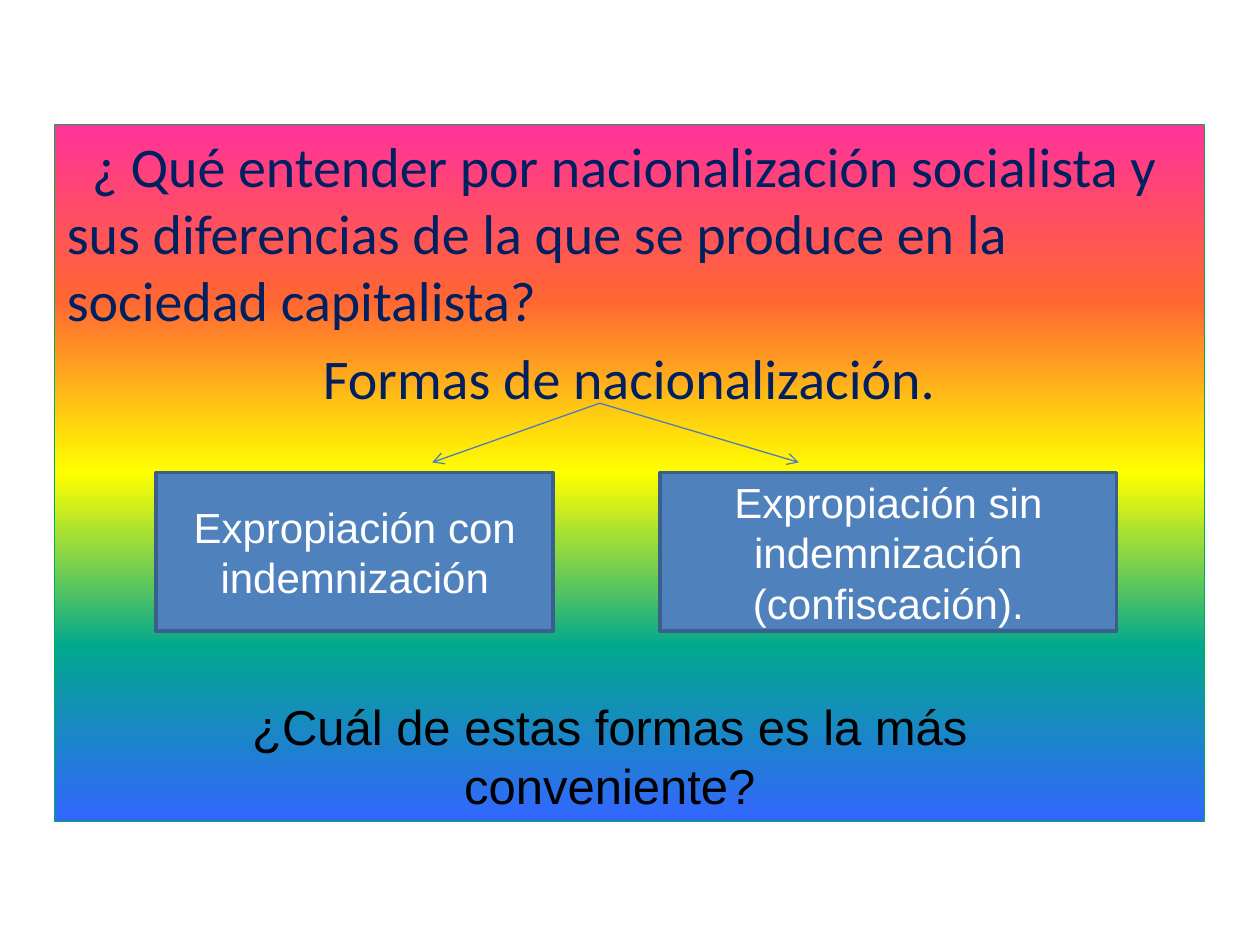
from lxml import etree
from pptx import Presentation
from pptx.dml.color import RGBColor
from pptx.enum.shapes import MSO_CONNECTOR, MSO_SHAPE
from pptx.enum.text import MSO_ANCHOR, MSO_AUTO_SIZE, PP_ALIGN
from pptx.oxml.ns import qn
from pptx.util import Inches, Pt

CENTER, LEFT = PP_ALIGN.CENTER, PP_ALIGN.LEFT
MIDDLE = MSO_ANCHOR.MIDDLE
RECTANGLE = MSO_SHAPE.RECTANGLE
STRAIGHT = MSO_CONNECTOR.STRAIGHT
FIT_SHAPE, NO_FIT = MSO_AUTO_SIZE.SHAPE_TO_FIT_TEXT, MSO_AUTO_SIZE.NONE

NAVY = RGBColor(0x00, 0x20, 0x60)
GREEN = RGBColor(0x00, 0xB0, 0x50)
BLUE = RGBColor(0x4F, 0x81, 0xBD)
BLUE_EDGE = RGBColor(0x3A, 0x5F, 0x8C)
ARROW_BLUE = RGBColor(0x4B, 0x7E, 0xBC)
WHITE = RGBColor(0xFF, 0xFF, 0xFF)
BLACK = RGBColor(0x00, 0x00, 0x00)
RAINBOW = [
    RGBColor(0xFF, 0x33, 0x99),
    RGBColor(0xFF, 0x66, 0x33),
    RGBColor(0xFF, 0xFF, 0x00),
    RGBColor(0x01, 0xA7, 0x8F),
    RGBColor(0x33, 0x66, 0xFF),
]


def format_paragraph(p, font, size, color, align=CENTER):
    """Align a paragraph and format its runs."""
    p.alignment = align
    for r in p.runs:
        r.font.name = font
        r.font.size = Pt(size)
        r.font.color.rgb = color


def fill_rainbow(sp):
    """Fill a shape from top to bottom with evenly spaced colours."""
    sp.fill.gradient()
    sp.fill.gradient_angle = 270
    stops = sp._element.spPr.find(".//" + qn("a:gsLst"))
    for stop in list(stops):
        stops.remove(stop)
    for i, color in enumerate(RAINBOW):
        pos = 100000 * i // (len(RAINBOW) - 1)
        stop = etree.SubElement(stops, qn("a:gs"), pos=str(pos))
        etree.SubElement(stop, qn("a:srgbClr"), val=str(color))


def fill_body(sp, question, heading):
    """Place the body placeholder and write its two unbulleted paragraphs."""
    sp.left, sp.top = Inches(0.43), Inches(0.99)
    sp.width, sp.height = Inches(9.13), Inches(5.53)
    fill_rainbow(sp)
    sp.line.color.rgb = GREEN
    sp.line.width = Pt(0.75)
    tf = sp.text_frame
    tf.auto_size = NO_FIT
    tf.text = question
    tf.add_paragraph().text = heading
    for p, align, indent in zip(tf.paragraphs, (LEFT, CENTER), (0.2, 0)):
        format_paragraph(p, "Calibri", 32, NAVY, align)
        pPr = p._p.get_or_add_pPr()
        pPr.set("marL", "0")
        pPr.set("indent", str(Inches(indent)))
        etree.SubElement(pPr, qn("a:buNone"))


def add_box(slide, left, width, text):
    """Add a blue box for one form of nationalisation."""
    sp = slide.shapes.add_shape(
        RECTANGLE, Inches(left), Inches(3.75), Inches(width), Inches(1.26))
    sp.shadow.inherit = False
    sp.fill.solid()
    sp.fill.fore_color.rgb = BLUE
    sp.line.color.rgb = BLUE_EDGE
    sp.line.width = Pt(2)
    tf = sp.text_frame
    tf.word_wrap = True
    tf.vertical_anchor = MIDDLE
    tf.text = text
    format_paragraph(tf.paragraphs[0], "Arial", 24, WHITE)


def add_arrow(slide, end_x):
    """Add an arrow from the heading down towards a box."""
    line = slide.shapes.add_connector(
        STRAIGHT, Inches(4.76), Inches(3.2), Inches(end_x), Inches(3.67))
    line.line.color.rgb = ARROW_BLUE
    line.line.width = Pt(0.75)
    etree.SubElement(line.line._get_or_add_ln(), qn("a:tailEnd"), type="arrow")
    etree.SubElement(line._element.spPr, qn("a:effectLst"))


def add_closing_question(slide, text):
    """Add the centred question at the bottom."""
    tb = slide.shapes.add_textbox(
        Inches(1.06), Inches(5.48), Inches(7.56), Inches(1.04))
    tf = tb.text_frame
    tf.word_wrap = True
    tf.auto_size = FIT_SHAPE
    tf.text = text
    format_paragraph(tf.paragraphs[0], "Arial", 28, BLACK)


def main():
    """Build the slide and save it."""
    prs = Presentation()
    prs.slide_width, prs.slide_height = Inches(10), Inches(7.5)
    slide = prs.slides.add_slide(prs.slide_layouts[1])
    title = slide.shapes.title._element
    title.getparent().remove(title)
    fill_body(
        slide.placeholders[1],
        "¿ Qué entender por nacionalización socialista y sus diferencias "
        "de la que se produce en la sociedad capitalista?",
        "Formas de nacionalización.")
    add_box(slide, 1.24, 3.15, "Expropiación con indemnización")
    add_box(slide, 5.24, 3.62, "Expropiación sin indemnización (confiscación).")
    for end_x in (3.43, 6.34):
        add_arrow(slide, end_x)
    add_closing_question(slide, "¿Cuál de estas formas es la más conveniente?")
    prs.save("out.pptx")


if __name__ == "__main__":
    main()
